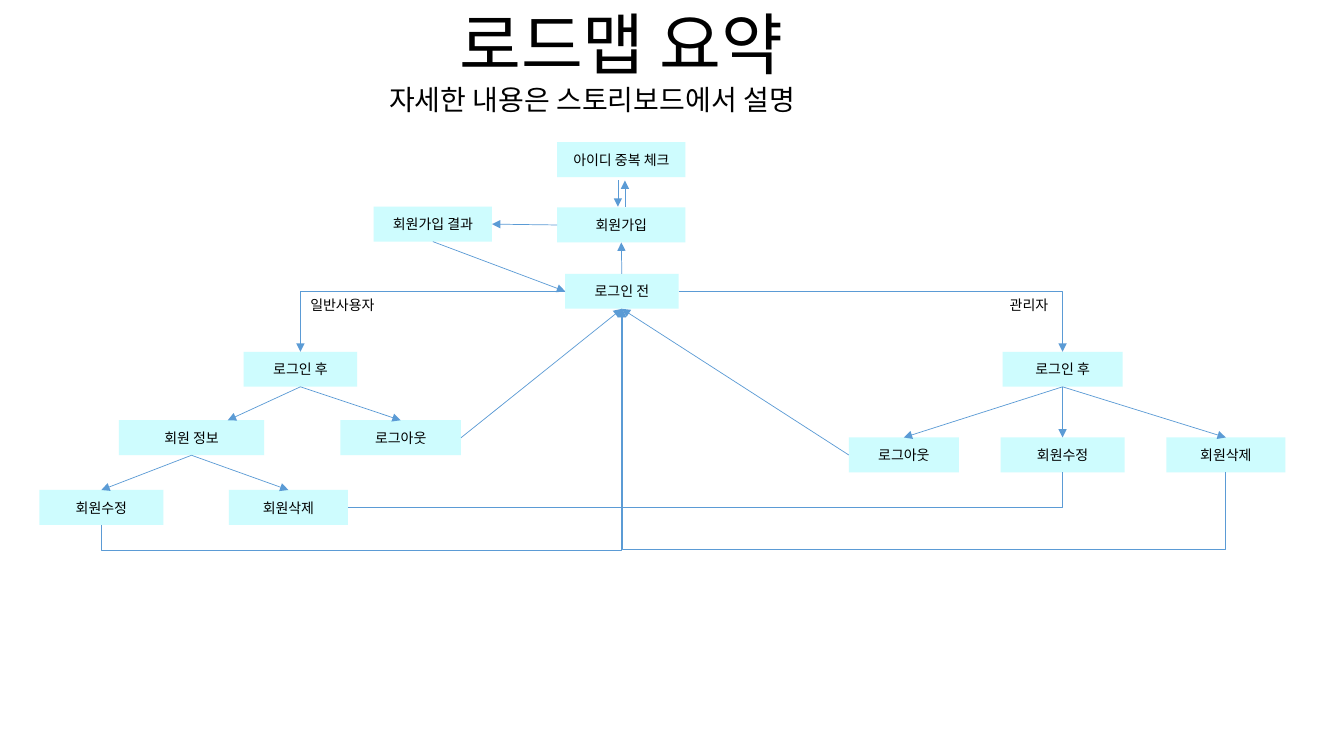
import pptx
import pptx.util
import pptx.dml.color
import pptx.enum.shapes
import pptx.enum.text
import pptx.oxml.ns
from dataclasses import dataclass
from lxml import etree

Pt = pptx.util.Pt
RGB = pptx.dml.color.RGBColor
qn = pptx.oxml.ns.qn
Connector = pptx.enum.shapes.MSO_CONNECTOR
Align = pptx.enum.text.PP_ALIGN
Anchor = pptx.enum.text.MSO_ANCHOR
TOP, LEFT, BOTTOM, RIGHT = range(4)


@dataclass(frozen=True)
class Theme:
    font: str = "Noto Sans CJK KR"
    text: RGB = RGB(0, 0, 0)
    box: RGB = RGB(0xCE, 0xFC, 0xFE)
    line: RGB = RGB(0x5B, 0x9B, 0xD5)
    title: int = 48
    subtitle: int = 20
    body: int = 10
    stroke: float = 0.5


THEME = Theme()
BOX_HEIGHT = 25

BOXES = {
    "before": ("로그인 전", 444.2, 195.6, 81),
    "admin": ("로그인 후", 759, 251.3, 85.7),
    "user": ("로그인 후", 214.6, 251.3, 81),
    "result": ("회원가입 결과", 309.2, 147.6, 84.5),
    "join": ("회원가입", 443.8, 148.2, 91.7),
    "check": ("아이디 중복 체크", 443.8, 101.5, 91.7),
    "admin_logout": ("로그아웃", 645.6, 312.5, 78.6),
    "admin_edit": ("회원수정", 759, 312.5, 88.6),
    "admin_delete": ("회원삭제", 875.6, 312.5, 85),
    "user_info": ("회원 정보", 136.8, 300.2, 103.7),
    "user_logout": ("로그아웃", 286.2, 300.2, 86.2),
    "user_edit": ("회원수정", 72.4, 350, 88.6),
    "user_delete": ("회원삭제", 206, 350, 85),
}

STRAIGHT = [
    ("before", TOP, "join", BOTTOM),
    ("join", LEFT, "result", RIGHT),
    ("result", BOTTOM, "before", LEFT),
    ("user", BOTTOM, "user_logout", TOP),
    ("user_logout", RIGHT, "before", BOTTOM),
    ("user_info", BOTTOM, "user_edit", TOP),
    ("user_info", BOTTOM, "user_delete", TOP),
    ("admin", BOTTOM, "admin_delete", TOP),
    ("admin", BOTTOM, "admin_edit", TOP),
    ("admin", BOTTOM, "admin_logout", TOP),
    ("admin_logout", LEFT, "before", BOTTOM),
]

CORNERS = [
    ("before", LEFT, "user", TOP),
    ("before", RIGHT, "admin", TOP),
    ("user_delete", RIGHT, "before", BOTTOM),
]

RETURNS = [("user_edit", 18), ("admin_edit", 24.7), ("admin_delete", 54.8)]


def style_text(sp, sizes, align):
    for p, size in zip(sp.text_frame.paragraphs, sizes):
        p.alignment = align
        p.line_spacing = 1.0
        p.space_before = Pt(0)
        for r in p.runs:
            r.font.size = Pt(size)
            r.font.color.rgb = THEME.text
            r.font.name = THEME.font
    for props in sp.element.iter(qn("a:rPr")):
        etree.SubElement(props, qn("a:ea"), typeface=THEME.font)


def add_title(s, title, subtitle):
    sp = s.shapes.title
    sp.left, sp.top, sp.width, sp.height = Pt(270.7), Pt(-2.2), Pt(346.3), Pt(90)
    tf = sp.text_frame
    tf.text = title
    tf.add_paragraph().text = subtitle
    tf.word_wrap = True
    tf.vertical_anchor = Anchor.TOP
    tf.auto_size = pptx.enum.text.MSO_AUTO_SIZE.SHAPE_TO_FIT_TEXT
    style_text(sp, (THEME.title, THEME.subtitle), Align.LEFT)
    tf.paragraphs[0].alignment = Align.CENTER


def add_box(s, text, center, top, width):
    sp = s.shapes.add_shape(pptx.enum.shapes.MSO_SHAPE.RECTANGLE,
                            Pt(center - width / 2), Pt(top), Pt(width), Pt(BOX_HEIGHT))
    sp.shadow.inherit = False
    sp.fill.solid()
    sp.fill.fore_color.rgb = THEME.box
    sp.line.fill.background()
    sp.text_frame.text = text
    sp.text_frame.vertical_anchor = Anchor.MIDDLE
    style_text(sp, (THEME.body,), Align.CENTER)
    return sp


def add_label(s, text, left, top, width):
    sp = s.shapes.add_textbox(Pt(left), Pt(top), Pt(width), Pt(19.4))
    tf = sp.text_frame
    tf.text = text
    tf.word_wrap = True
    tf.auto_size = pptx.enum.text.MSO_AUTO_SIZE.SHAPE_TO_FIT_TEXT
    style_text(sp, (THEME.body,), Align.LEFT)


def add_arrow(s, start=(0, 0), end=(0, 0), kind=Connector.STRAIGHT):
    c = s.shapes.add_connector(kind, *(Pt(v) for v in (*start, *end)))
    c.line.color.rgb = THEME.line
    c.line.width = Pt(THEME.stroke)
    props = c.element.find(qn("p:spPr"))
    etree.SubElement(props.find(qn("a:ln")), qn("a:tailEnd"), type="triangle")
    etree.SubElement(props, qn("a:effectLst"))
    return c


def join_boxes(s, source, source_side, target, target_side, kind=Connector.STRAIGHT):
    c = add_arrow(s, kind=kind)
    c.begin_connect(source, source_side)
    c.end_connect(target, target_side)
    return c


def add_corner(s, *ends):
    c = join_boxes(s, *ends, kind=Connector.ELBOW)
    c.element.find(".//" + qn("a:prstGeom")).set("prst", "bentConnector2")


def add_return(s, source, target, drop):
    c = join_boxes(s, source, BOTTOM, target, BOTTOM, Connector.ELBOW)
    rise = c.begin_y - c.end_y
    span = abs(c.end_x - c.begin_x)
    mid_x = (c.begin_x + c.end_x) // 2
    mid_y = (c.begin_y + c.end_y) // 2
    flip_v = c.begin_x < c.end_x
    c.left, c.top = mid_x - rise // 2, mid_y - span // 2
    c.width, c.height = rise, span
    xfrm = c.element.find(".//" + qn("a:xfrm"))
    xfrm.set("rot", "5400000")
    xfrm.set("flipH", "1")
    xfrm.set("flipV", str(int(flip_v)))
    guides = c.element.find(".//" + qn("a:avLst"))
    bend = round(-Pt(drop) / rise * 100000)
    etree.SubElement(guides, qn("a:gd"), name="adj1", fmla=f"val {bend}")


def main():
    prs = pptx.Presentation()
    prs.slide_width, prs.slide_height = Pt(960), Pt(540)
    s = prs.slides.add_slide(prs.slide_layouts[5])
    add_title(s, "로드맵 요약", "자세한 내용은 스토리보드에서 설명")
    boxes = {name: add_box(s, *box) for name, box in BOXES.items()}
    add_label(s, "일반사용자", 214.6, 208.1, 72)
    add_label(s, "관리자", 714.2, 208.1, 45.4)
    add_arrow(s, (441.4, 128.9), (441.4, 147.6))
    add_arrow(s, (446.4, 147.6), (446.4, 128.9))
    info = add_arrow(s, end=(162.7, 300.2))
    info.begin_connect(boxes["user"], BOTTOM)
    for source, source_side, target, target_side in STRAIGHT:
        join_boxes(s, boxes[source], source_side, boxes[target], target_side)
    for source, source_side, target, target_side in CORNERS:
        add_corner(s, boxes[source], source_side, boxes[target], target_side)
    for source, drop in RETURNS:
        add_return(s, boxes[source], boxes["before"], drop)
    prs.save("out.pptx")


if __name__ == "__main__":
    main()
